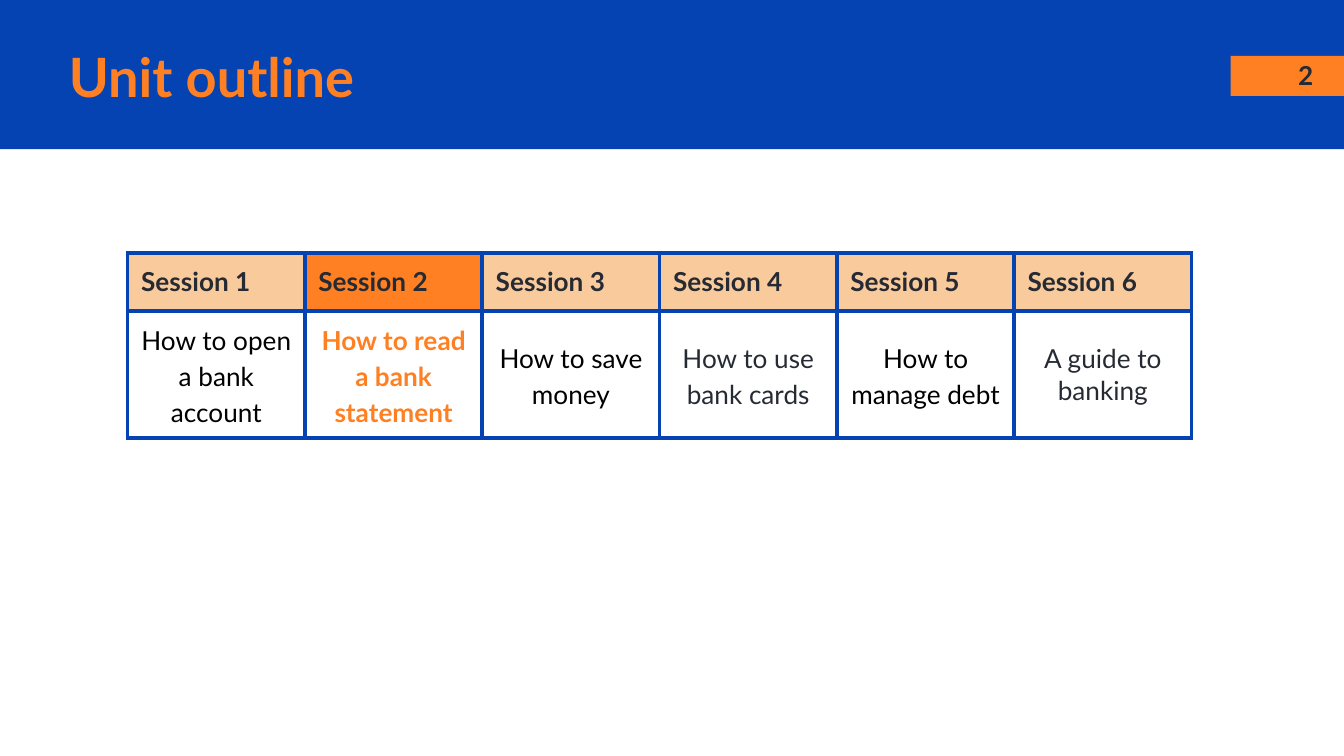
from dataclasses import dataclass

from lxml import etree
from pptx import Presentation
from pptx.dml.color import RGBColor
from pptx.enum.shapes import MSO_SHAPE
from pptx.enum.text import MSO_ANCHOR, PP_ALIGN
from pptx.oxml.ns import qn
from pptx.slide import Slide
from pptx.table import _Cell
from pptx.text.text import TextFrame
from pptx.util import Pt

RECTANGLE = MSO_SHAPE.RECTANGLE
MIDDLE, TOP = MSO_ANCHOR.MIDDLE, MSO_ANCHOR.TOP
LEFT, CENTER, RIGHT = PP_ALIGN.LEFT, PP_ALIGN.CENTER, PP_ALIGN.RIGHT


@dataclass(frozen=True)
class Theme:
    font: str = "Lato"
    blue: str = "0543B3"
    orange: str = "FF8022"
    peach: str = "F9CB9C"
    ink: str = "262A33"
    black: str = "000000"
    white: str = "FFFFFF"
    title_size: float = 29
    body_size: float = 14
    border_width: float = 2.25


THEME = Theme()


@dataclass(frozen=True)
class Area:
    left: float
    top: float
    width: float
    height: float

    def points(self) -> tuple[Pt, Pt, Pt, Pt]:
        return Pt(self.left), Pt(self.top), Pt(self.width), Pt(self.height)


@dataclass(frozen=True)
class TextStyle:
    color: str
    bold: bool = False
    size: float = THEME.body_size
    align: PP_ALIGN = LEFT
    spacing: float = 1.0


@dataclass(frozen=True)
class Session:
    topic: str
    color: str
    current: bool = False
    spacing: float = 1.15
    inset: float = 5


SESSIONS = [
    Session("How to open a bank account", THEME.black),
    Session("How to read a bank statement", THEME.orange, current=True),
    Session("How to save money", THEME.black),
    Session("How to use bank cards", THEME.ink),
    Session("How to manage debt", THEME.black),
    Session("A guide to banking", THEME.ink, spacing=1.0, inset=7.2),
]
HEADER_INSET = 7.2
TABLE_LEFT, TABLE_TOP = 68.4, 135.4
COLUMN_WIDTH = 95
ROW_HEIGHTS = (31.2, 68)


def write(frame: TextFrame, text: str, style: TextStyle) -> None:
    para = frame.paragraphs[0]
    para.alignment = style.align
    para.line_spacing = style.spacing
    span = para.add_run()
    span.text = text
    span.font.name = THEME.font
    span.font.size = Pt(style.size)
    span.font.bold = style.bold
    span.font.color.rgb = RGBColor.from_string(style.color)


def add_block(page: Slide, area: Area, color: str) -> None:
    block = page.shapes.add_shape(RECTANGLE, *area.points())
    block.shadow.inherit = False
    block.fill.solid()
    block.fill.fore_color.rgb = RGBColor.from_string(color)
    block.line.fill.background()


def add_label(page: Slide, area: Area, text: str, style: TextStyle) -> None:
    frame = page.shapes.add_textbox(*area.points()).text_frame
    frame.word_wrap = True
    frame.vertical_anchor = MIDDLE
    frame.margin_left = frame.margin_right = Pt(7.2)
    frame.margin_top = frame.margin_bottom = Pt(7.2)
    write(frame, text, style)


def add_borders(cell: _Cell) -> None:
    properties = cell._tc.get_or_add_tcPr()
    for side in ("a:lnL", "a:lnR", "a:lnT", "a:lnB"):
        line = etree.SubElement(properties, qn(side), w=str(Pt(THEME.border_width)))
        fill = etree.SubElement(line, qn("a:solidFill"))
        etree.SubElement(fill, qn("a:srgbClr"), val=THEME.blue)


def fill_cell(cell: _Cell, text: str, style: TextStyle, color: str,
              inset: float, anchor: MSO_ANCHOR) -> None:
    add_borders(cell)
    cell.fill.solid()
    cell.fill.fore_color.rgb = RGBColor.from_string(color)
    cell.margin_left = cell.margin_right = Pt(inset)
    cell.margin_top = cell.margin_bottom = Pt(inset)
    cell.vertical_anchor = anchor
    write(cell.text_frame, text, style)


def add_outline(page: Slide, sessions: list[Session]) -> None:
    area = Area(TABLE_LEFT, TABLE_TOP, COLUMN_WIDTH * len(sessions), sum(ROW_HEIGHTS))
    table = page.shapes.add_table(len(ROW_HEIGHTS), len(sessions), *area.points()).table
    table.first_row = table.horz_banding = False
    for row, height in zip(table.rows, ROW_HEIGHTS):
        row.height = Pt(height)
    for index, session in enumerate(sessions):
        table.columns[index].width = Pt(COLUMN_WIDTH)
        fill_cell(table.cell(0, index), f"Session {index + 1}",
                  TextStyle(THEME.ink, bold=True),
                  THEME.orange if session.current else THEME.peach,
                  HEADER_INSET, TOP)
        fill_cell(table.cell(1, index), session.topic,
                  TextStyle(session.color, bold=session.current, align=CENTER,
                            spacing=session.spacing),
                  THEME.white, session.inset, MIDDLE)


def main() -> None:
    deck = Presentation()
    deck.slide_width, deck.slide_height = Pt(720), Pt(405)
    page = deck.slides.add_slide(deck.slide_layouts[6])
    add_block(page, Area(0, 0, 720, 80), THEME.blue)
    add_block(page, Area(659.3, 30, 60.7, 21.4), THEME.orange)
    add_label(page, Area(659, 31, 51.6, 18.7), "2",
              TextStyle(THEME.ink, bold=True, align=RIGHT))
    add_label(page, Area(29.8, 20.4, 609, 40.3), "Unit outline",
              TextStyle(THEME.orange, bold=True, size=THEME.title_size))
    add_outline(page, SESSIONS)
    deck.save("out.pptx")


if __name__ == "__main__":
    main()
